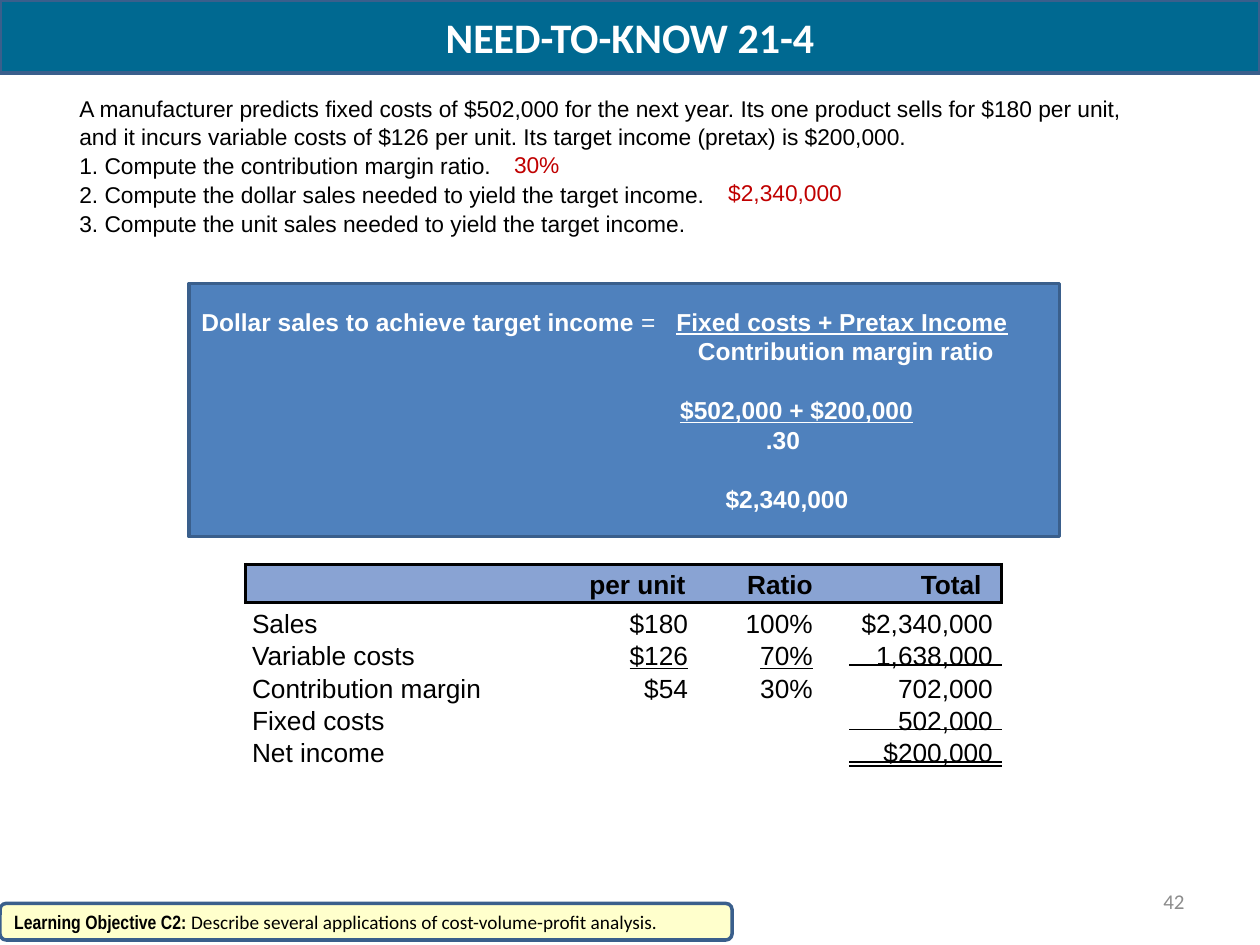
import pptx
import pptx.util
import pptx.dml.color
import pptx.enum.shapes
import pptx.enum.text
from lxml import etree
from pptx.oxml.ns import qn

Inches, Pt = pptx.util.Inches, pptx.util.Pt
ALIGN = pptx.enum.text.PP_ALIGN
ANCHOR = pptx.enum.text.MSO_ANCHOR
SHAPE = pptx.enum.shapes.MSO_SHAPE
LINE = pptx.enum.shapes.MSO_CONNECTOR.STRAIGHT
BLACK, WHITE, RED, EDGE = "000000", "FFFFFF", "C00000", "3A5F8C"

TITLE = "NEED-TO-KNOW 21-4"
TASK = [
    "A manufacturer predicts fixed costs of $502,000 for the next year. "
    "Its one product sells for $180 per unit, and it incurs variable costs "
    "of $126 per unit. Its target income (pretax) is $200,000.",
    "1. Compute the contribution margin ratio.",
    "2. Compute the dollar sales needed to yield the target income.",
    "3. Compute the unit sales needed to yield the target income.",
]
ANSWERS = [("30%", 4.08, 2), ("$2,340,000", 5.78, 3)]  # text, left, line
# indent, points before, runs of (text, bold, underline)
FORMULA = [
    (0, 0, [("Dollar sales to achieve target income ", True, False),
            ("=\t", False, False),
            ("Fixed costs + Pretax Income", True, True)]),
    (3.94, 0, [("Contribution margin ratio", True, False)]),
    (3.8, 17, [("$502,000 + $200,000", True, True)]),
    (4.48, 0, [(".30", True, False)]),
    (4.16, 17, [("$2,340,000", True, False)]),
]
ROWS = [
    ("", "per unit", "Ratio", "Total"),
    ("Sales", "$180", "100%", "$2,340,000"),
    ("Variable costs", "$126", "70%", "1,638,000"),
    ("Contribution margin", "$54", "30%", "702,000"),
    ("Fixed costs", "", "", "502,000"),
    ("Net income", "", "", "$200,000"),
]
WIDTHS = [2.45, 1.15, 1.19, 1.21]
HIGHS = [0.3, 0.29] + [0.257] * 4
HEAD_RIGHTS = [0, 0.11, 0.29, 0.16]
RIGHTS = [0, 0.09, 0.29, 0.07]
UNDER = {(2, 1), (2, 2)}
RULES = [5.28, 5.79, 6.05, 6.08]
GOAL = [("Learning Objective C2: ", "Arial Narrow", True),
        ("Describe several applications of cost-volume-profit analysis.",
         "Calibri", False)]


def rgb(code):
    return pptx.dml.color.RGBColor.from_string(code)


def add_run(para, text, size, color=BLACK, face="Arial", bold=False,
            under=False):
    run = para.add_run()
    run.text = text
    font = run.font
    font.size, font.name, font.bold = Pt(size), face, bold
    font.underline = under
    font.color.rgb = rgb(color)


def paint(shape, fill):
    shape.fill.solid()
    shape.fill.fore_color.rgb = rgb(fill)
    shape.line.color.rgb = rgb(EDGE)
    shape.line.width = Pt(2)
    shape.shadow.inherit = False
    shape.text_frame.vertical_anchor = ANCHOR.MIDDLE
    shape.text_frame.word_wrap = True


def add_panel(slide, kind, box, fill):
    panel = slide.shapes.add_shape(kind, *map(Inches, box))
    paint(panel, fill)
    return panel.text_frame


def add_text(slide, box, inset=0):
    frame = slide.shapes.add_textbox(*map(Inches, box)).text_frame
    frame.word_wrap = True
    frame.margin_left = frame.margin_right = Inches(inset)
    frame.margin_top = frame.margin_bottom = 0
    return frame


def next_para(frame, index):
    return frame.add_paragraph() if index else frame.paragraphs[0]


def add_border(cell, side, width):
    props = cell._tc.get_or_add_tcPr()
    line = etree.SubElement(props, qn("a:ln" + side), w=str(Pt(width)))
    fill = etree.SubElement(line, qn("a:solidFill"))
    etree.SubElement(fill, qn("a:srgbClr"), val=BLACK)


def add_rule(slide, left, right, y):
    rule = slide.shapes.add_connector(LINE, Inches(left), Inches(y),
                                      Inches(right), Inches(y))
    rule.line.color.rgb = rgb(BLACK)
    rule.line.width = Pt(1)
    etree.SubElement(rule._element.spPr, qn("a:effectLst"))


def add_task(slide):
    top, step = 0.74, 0.2275
    frame = add_text(slide, (0.63, top, 8.45, 1.2))
    for i, text in enumerate(TASK):
        para = next_para(frame, i)
        para.line_spacing = Pt(step * 72)
        add_run(para, text, 13)
    for text, left, line in ANSWERS:
        frame = add_text(slide, (left, top + line * step, 1, 0.22))
        add_run(frame.paragraphs[0], text, 13, RED)


def add_formula(slide):
    frame = add_panel(slide, SHAPE.RECTANGLE, (1.5, 2.25, 6.91, 2.01),
                      "4F81BD")
    for i, (indent, before, runs) in enumerate(FORMULA):
        para = next_para(frame, i)
        para.alignment = ALIGN.LEFT
        para.space_before = Pt(before)
        props = para._p.get_or_add_pPr()
        props.set("marL", str(Inches(indent)))
        if not indent:
            tabs = etree.SubElement(props, qn("a:tabLst"))
            etree.SubElement(tabs, qn("a:tab"), pos=str(Inches(3.77)),
                             algn="l")
        for text, bold, under in runs:
            add_run(para, text, 14, WHITE, bold=bold, under=under)


def add_income(slide):
    left, top, wide = 1.95, 4.48, sum(WIDTHS)
    box = map(Inches, (left, top, wide, sum(HIGHS)))
    table = slide.shapes.add_table(len(ROWS), len(WIDTHS), *box).table
    table.horz_banding = False
    style = table._tbl.find(".//" + qn("a:tableStyleId"))
    style.text = "{2D5ABB26-0587-4C30-8999-92F81FD0307C}"  # no style, no grid
    for col, width in zip(table.columns, WIDTHS):
        col.width = Inches(width)
    last = len(WIDTHS) - 1
    for r, row in enumerate(ROWS):
        table.rows[r].height = Inches(HIGHS[r])
        for c, text in enumerate(row):
            cell = table.cell(r, c)
            cell.margin_top = cell.margin_bottom = 0
            cell.margin_left = Inches(0.05)
            cell.margin_right = Inches((RIGHTS if r else HEAD_RIGHTS)[c])
            cell.vertical_anchor = ANCHOR.BOTTOM
            para = cell.text_frame.paragraphs[0]
            para.alignment = ALIGN.RIGHT if c else ALIGN.LEFT
            if text:
                add_run(para, text, 15, bold=r == 0, under=(r, c) in UNDER)
            else:
                etree.SubElement(para._p, qn("a:endParaRPr"), sz="1500")
            if r:
                cell.fill.background()
                continue
            cell.margin_bottom = Inches(0.02)
            ends = ("L" if c == 0 else "") + ("R" if c == last else "")
            for side in ends + "TB":
                add_border(cell, side, 2)
            cell.fill.solid()
            cell.fill.fore_color.rgb = rgb("89A3D3")
    for y in RULES:
        add_rule(slide, left + wide - WIDTHS[-1], left + wide, y)


def main():
    deck = pptx.Presentation()
    deck.slide_width, deck.slide_height = Inches(10), Inches(7.5)
    slide = deck.slides.add_slide(deck.slide_layouts[5])

    title = slide.shapes.title
    title.left, title.top = Inches(0), Inches(0)
    title.width, title.height = Inches(10), Inches(0.58)
    paint(title, "006991")
    para = title.text_frame.paragraphs[0]
    para.alignment = ALIGN.CENTER
    add_run(para, TITLE, 24, WHITE, "Calibri", True)

    add_task(slide)
    add_formula(slide)
    add_income(slide)

    frame = add_text(slide, (7.17, 6.95, 2.33, 0.4), 0.1)
    frame.vertical_anchor = ANCHOR.MIDDLE
    frame.paragraphs[0].alignment = ALIGN.RIGHT
    add_run(frame.paragraphs[0], "42", 12, "8C8C8C", "Calibri")

    goal = add_panel(slide, SHAPE.ROUNDED_RECTANGLE, (0, 7.17, 5.81, 0.29),
                     "FFFFCC")
    goal.paragraphs[0].alignment = ALIGN.LEFT
    for text, face, bold in GOAL:
        add_run(goal.paragraphs[0], text, 11, BLACK, face, bold)
    deck.save("out.pptx")


if __name__ == "__main__":
    main()
